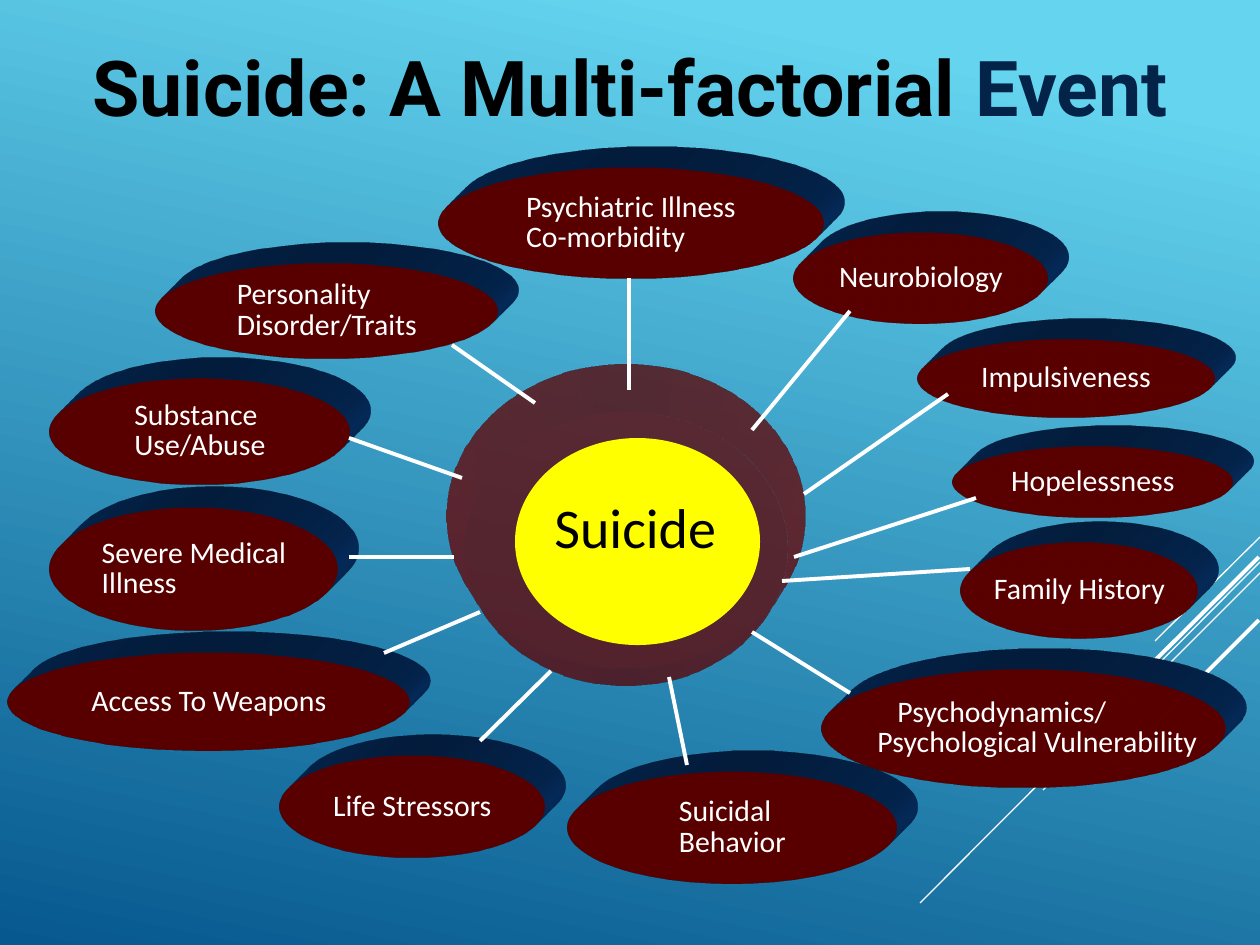
import pptx
import pptx.util
import pptx.oxml
import pptx.oxml.ns
from pptx.dml.color import RGBColor
from pptx.enum.shapes import MSO_CONNECTOR, MSO_SHAPE
from pptx.enum.text import MSO_ANCHOR, MSO_AUTO_SIZE, PP_ALIGN

PX = 914400 / 126
WHITE = RGBColor(0xFF, 0xFF, 0xFF)
BLACK = RGBColor(0, 0, 0)
MAROON = RGBColor(0x80, 0, 0)
YELLOW = RGBColor(0xFF, 0xFF, 0)
NAVY = RGBColor(0x04, 0x23, 0x49)
DEPTH_BLUE = RGBColor(0x06, 0x30, 0x65)
SKY = RGBColor(0x64, 0xD4, 0xEF)
OCEAN = RGBColor(0x06, 0x58, 0x8E)
NAMESPACE = pptx.oxml.ns.nsdecls("a")


def px(*lengths):
    return [round(length * PX) for length in lengths]


def write_text(shape, paragraphs, size, font="Calibri", color=WHITE, bold=None,
               align=None, spacing=None, indents=()):
    """Fill a shape with paragraphs; \\v in a paragraph is a line break."""
    frame = shape.text_frame
    for index, text in enumerate(paragraphs):
        paragraph = frame.add_paragraph() if index else frame.paragraphs[0]
        paragraph.text = text
        paragraph.alignment = align
        paragraph.line_spacing = spacing
        if indents:
            paragraph._p.get_or_add_pPr().set("marL", str(px(indents[index])[0]))
        for run in paragraph.runs:
            run.font.name = font
            run.font.size = pptx.util.Pt(size)
            run.font.bold = bold
            run.font.color.rgb = color


presentation = pptx.Presentation()
presentation.slide_width, presentation.slide_height = px(1260, 945)
slide = presentation.slides.add_slide(presentation.slide_layouts[6])

background = slide.background.fill
background.gradient()
background.gradient_angle = 258
for stop, color, position in zip(background.gradient_stops, (SKY, OCEAN), (0.1, 1)):
    stop.color.rgb = color
    stop.position = position

# Lines: from x, from y, to x, to y, width in points
corner_rays = [
    (1260, 537, 1155, 641, 0.75),
    (1260, 562, 920, 903, 0.75),
    (1260, 573, 1043, 790, 0.75),
    (1259, 557, 1060, 755, 2.25),
    (1259, 620, 1115, 764, 2.25),
]
spokes = [
    (629, 278, 629, 390, 2.25),
    (948, 394, 804, 494, 2.25),
    (976, 498, 794, 557, 2.25),
    (970, 569, 782, 581, 2.25),
    (850, 693, 752, 632, 2.25),
    (480, 741, 551, 671, 2.25),
    (384, 653, 480, 612, 2.25),
    (349, 557, 454, 557, 2.25),
    (349, 438, 462, 478, 2.25),
    (452, 345, 535, 403, 2.25),
    (669, 677, 687, 765, 2.25),
    (850, 311, 752, 430, 2.25),
]

# Ovals: left, top, width, height, paragraphs
hub = (446, 364, 359, 304, [])
core = (515, 438, 245, 207, [])
factors = [
    (794, 233, 254, 91, ["Neurobiology"]),
    (50, 508, 288, 123, ["Severe Medical", "Illness"]),
    (917, 339, 298, 79, ["Impulsiveness"]),
    (8, 653, 402, 98, ["Access To Weapons"]),
    (953, 446, 280, 72, ["Hopelessness"]),
    (280, 756, 265, 102, ["Life Stressors"]),
    (961, 542, 237, 97, ["Family History"]),
    (568, 772, 329, 112, ["Suicidal", "Behavior"]),
    (156, 263, 342, 96, ["Personality\vDisorder/Traits"]),
    (438, 168, 386, 111, ["Psychiatric Illness\vCo-morbidity"]),
    (822, 669, 404, 119, ["Psychodynamics/", "Psychological Vulnerability"]),
    (50, 378, 300, 107, ["Substance\vUse/Abuse"]),
]

for group in (corner_rays, [hub, *factors, core], spokes):
    for item in group:
        if group in (corner_rays, spokes):
            *ends, width = item
            line = slide.shapes.add_connector(MSO_CONNECTOR.STRAIGHT, *px(*ends))
            line.line.color.rgb = WHITE
            line.line.width = pptx.util.Pt(width)
            line._element.spPr.append(pptx.oxml.parse_xml(f"<a:effectLst {NAMESPACE}/>"))
            continue
        *box, paragraphs = item
        oval = slide.shapes.add_shape(MSO_SHAPE.OVAL, *px(*box))
        oval.shadow.inherit = False
        oval.fill.solid()
        oval.fill.fore_color.rgb = YELLOW if item is core else MAROON
        oval.line.fill.background()
        if item is core:
            continue
        camera, depth, side = "legacyObliqueTopRight", 430200, DEPTH_BLUE
        if item is hub:
            camera, depth, side = "legacyPerspectiveBottom", 1050000, MAROON
        properties = oval._element.spPr
        properties.append(pptx.oxml.parse_xml(
            f'<a:scene3d {NAMESPACE}><a:camera prst="{camera}"/>'
            '<a:lightRig rig="legacyFlat3" dir="b"/></a:scene3d>'))
        properties.append(pptx.oxml.parse_xml(
            f'<a:sp3d {NAMESPACE} extrusionH="{depth}" prstMaterial="legacyMatte">'
            f'<a:extrusionClr><a:srgbClr val="{side}"/></a:extrusionClr></a:sp3d>'))
        if item is hub:
            properties.find(".//" + pptx.oxml.ns.qn("a:srgbClr")).append(
                pptx.oxml.parse_xml(f'<a:alpha {NAMESPACE} val="50000"/>'))
            continue
        frame = oval.text_frame
        frame.word_wrap = False
        frame.vertical_anchor = MSO_ANCHOR.MIDDLE
        frame.margin_left = frame.margin_right = 0
        frame.margin_top = frame.margin_bottom = 0
        frame._txBody.bodyPr.set("anchorCtr", "1")
        indents = (47, 27) if paragraphs[0] == "Psychodynamics/" else ()
        write_text(oval, paragraphs, 17, align=PP_ALIGN.LEFT, spacing=0.85,
                   indents=indents)

center_label = slide.shapes.add_textbox(*px(542, 494, 229, 72))
title = slide.shapes.add_textbox(*px(0, 33, 1260, 106))
for box in (center_label, title):
    box.text_frame.word_wrap = True
    box.text_frame.auto_size = MSO_AUTO_SIZE.SHAPE_TO_FIT_TEXT
write_text(center_label, ["Suicide"], 32, color=BLACK, spacing=0.9)
write_text(title, ["Suicide: A Multi-factorial "], 44, font="Roboto", color=BLACK,
           bold=True, align=PP_ALIGN.CENTER)
event = title.text_frame.paragraphs[0].add_run()
event.text = "Event"
event.font.name = "Roboto"
event.font.size = pptx.util.Pt(44)
event.font.bold = True
event.font.color.rgb = NAVY

presentation.save("out.pptx")
